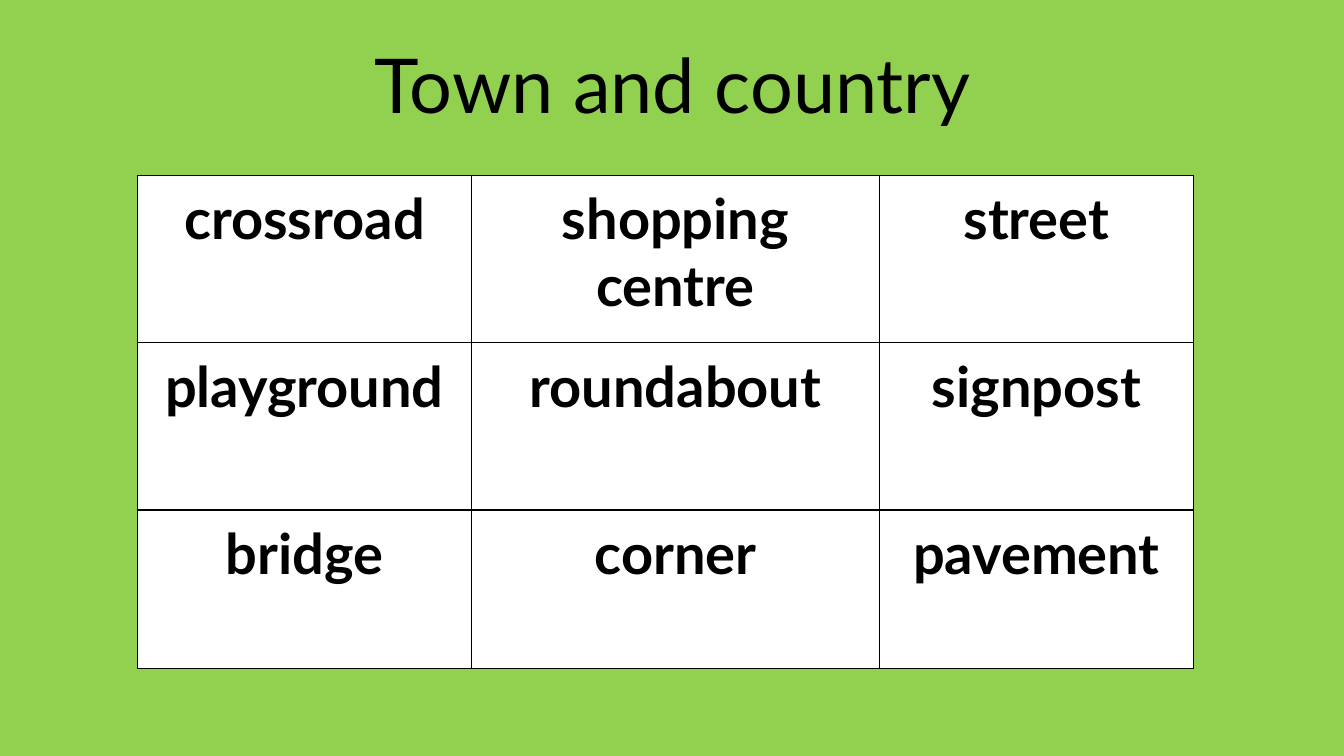
from lxml import etree
from pptx import Presentation
from pptx.dml.color import RGBColor
from pptx.enum.text import MSO_ANCHOR, PP_ALIGN
from pptx.oxml.ns import qn
from pptx.util import Inches, Pt

COLORS = {"background": "92D050", "cell": "FFFFFF", "ink": "000000"}
FONT = "Lato"
WORDS = [
    ["crossroad", "shopping centre", "street"],
    ["playground", "roundabout", "signpost"],
    ["bridge", "corner", "pavement"],
]
COL_WIDTHS = [3.32, 4.04, 3.12]
ROW_HEIGHTS = [1.66, 1.66, 1.57]


def rgb(name):
    return RGBColor.from_string(COLORS[name])


def style_text(p, size, bold=False):
    p.alignment = PP_ALIGN.CENTER
    for r in p.runs:
        r.font.name = FONT
        r.font.size = Pt(size)
        r.font.bold = bold
        r.font.color.rgb = rgb("ink")


def add_borders(cell, width=1):
    tc_pr = cell._tc.get_or_add_tcPr()
    for i, side in enumerate(("lnL", "lnR", "lnT", "lnB")):
        ln = etree.Element(qn(f"a:{side}"), w=str(Pt(width)))
        fill = etree.SubElement(ln, qn("a:solidFill"))
        etree.SubElement(fill, qn("a:srgbClr"), val=COLORS["ink"])
        # Borders come before the cell fill
        tc_pr.insert(i, ln)


def add_title(s, text, left, top, width, height):
    sp = s.shapes.add_textbox(Inches(left), Inches(top), Inches(width), Inches(height))
    tf = sp.text_frame
    tf.word_wrap = True
    tf.vertical_anchor = MSO_ANCHOR.BOTTOM
    tf.text = text
    p = tf.paragraphs[0]
    p.line_spacing = 0.9
    style_text(p, 54)


def add_word_table(s, words, left, top):
    table = s.shapes.add_table(
        len(words), len(words[0]), Inches(left), Inches(top),
        Inches(sum(COL_WIDTHS)), Inches(sum(ROW_HEIGHTS))).table
    table.first_row = table.horz_banding = False
    for col, width in zip(table.columns, COL_WIDTHS):
        col.width = Inches(width)
    for row, height, row_words in zip(table.rows, ROW_HEIGHTS, words):
        row.height = Inches(height)
        for cell, word in zip(row.cells, row_words):
            cell.margin_left = cell.margin_right = Inches(0.18)
            cell.margin_top = cell.margin_bottom = Inches(0.09)
            cell.fill.solid()
            cell.fill.fore_color.rgb = rgb("cell")
            add_borders(cell)
            cell.text = word
            style_text(cell.text_frame.paragraphs[0], 40, bold=True)


def main():
    prs = Presentation()
    prs.slide_width, prs.slide_height = Inches(13.33), Inches(7.5)
    s = prs.slides.add_slide(prs.slide_layouts[6])

    # Background
    s.background.fill.solid()
    s.background.fill.fore_color.rgb = rgb("background")

    # Title and vocabulary grid
    add_title(s, "Town and country", 0.92, 0.32, 11.5, 1.02)
    add_word_table(s, WORDS, 1.36, 1.74)
    prs.save("out.pptx")


if __name__ == "__main__":
    main()
